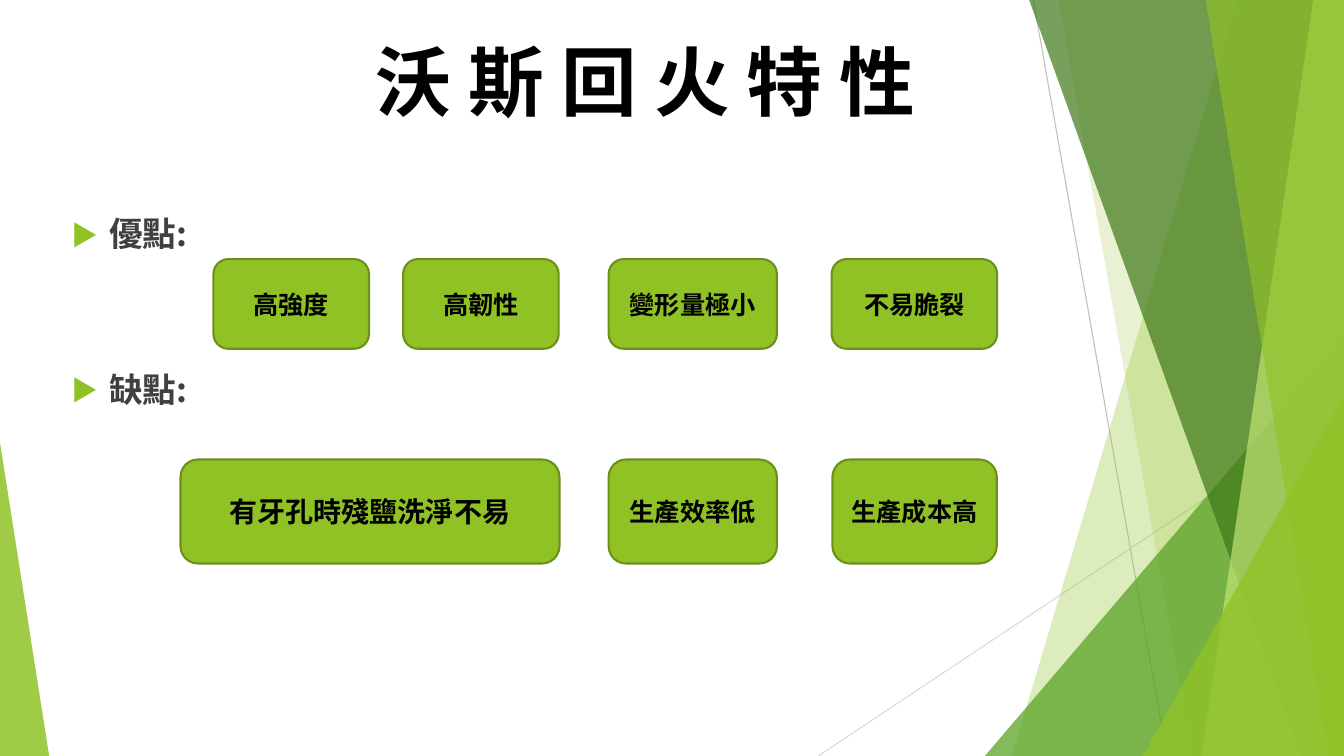
from lxml import etree
from pptx import Presentation
from pptx.dml.color import RGBColor
from pptx.enum.shapes import MSO_CONNECTOR, MSO_SHAPE
from pptx.enum.text import MSO_ANCHOR, MSO_AUTO_SIZE, PP_ALIGN
from pptx.oxml.ns import qn
from pptx.util import Cm, Pt

LINE = MSO_CONNECTOR.STRAIGHT
ROUND = MSO_SHAPE.ROUNDED_RECTANGLE
WEDGE = MSO_SHAPE.RIGHT_TRIANGLE
PEAK = MSO_SHAPE.ISOSCELES_TRIANGLE
TOP, MIDDLE = MSO_ANCHOR.TOP, MSO_ANCHOR.MIDDLE
CENTER, LEFT = PP_ALIGN.CENTER, PP_ALIGN.LEFT
FONT = "Noto Sans CJK SC"
WIDE, HIGH = 33.87, 19.05
HEX = {
    "lime": "90C226", "leaf": "54A021", "pine": "3F7819", "pale": "C0E474",
    "edge": "6B901C", "black": "000000", "text": "404040",
    "gray": "BFBFBF", "mist": "D9D9D9",
}


def write(para, text, size=18, color="black", align=CENTER):
    para.alignment = align
    run = para.add_run()
    run.text = text
    run.font.name = FONT
    run.font.size = Pt(size)
    run.font.bold = True
    run.font.color.rgb = RGBColor.from_string(HEX[color])
    etree.SubElement(run.font._element, qn("a:ea"), typeface=FONT)


def paint(shape, color, alpha=100):
    shape.shadow.inherit = False
    shape.fill.solid()
    shape.fill.fore_color.rgb = RGBColor.from_string(HEX[color])
    if alpha < 100:
        tint = shape._element.spPr.find(qn("a:solidFill"))[0]
        etree.SubElement(tint, qn("a:alpha"), val=str(alpha * 1000))


prs = Presentation()
prs.slide_width, prs.slide_height = Cm(WIDE), Cm(HIGH)
slide = prs.slides.add_slide(prs.slide_layouts[1])
shapes = slide.shapes
title, body = shapes.title, slide.placeholders[1]

rays = [
    (26.04, 0, 29.41, HIGH, "gray"),
    (WIDE, 10.24, 20.62, HIGH, "mist"),
]
for *ends, color in rays:
    ray = shapes.add_connector(LINE, *[Cm(end) for end in ends])
    ray.line.color.rgb = RGBColor.from_string(HEX[color])
    ray.line.width = Pt(0.75)
    etree.SubElement(ray._element.spPr, qn("a:effectLst"))

panes = [
    ((31.19, 25.5), "lime", 30),
    ((26.67, 30.05), "lime", 20),
    ((24.82, 8.46, 9.05, 10.59), "leaf", 72),
    ((25.93, 32.79), "pine", 70),
    ((33.1, 30.28), "pale", 70),
    ((30.38, 33.48), "lime", 65),
    ((28.8, 9.98, 5.07, 9.07), "lime", 80),
    ((0, 11.15, 1.24, 7.9), "lime", 85),
]
for place, color, alpha in panes:
    if len(place) == 2:
        high, low = place
        path = shapes.build_freeform(Cm(high), Cm(-0.02))
        corners = [(WIDE, -0.02), (WIDE, HIGH), (low, HIGH)]
        path.add_line_segments([(Cm(x), Cm(y)) for x, y in corners])
        pane = path.convert_to_shape()
    else:
        pane = shapes.add_shape(PEAK, *[Cm(part) for part in place])
        pane.adjustments[0] = 1 if place[0] else 0
    paint(pane, color, alpha)
    pane.line.fill.background()

holders = [
    (title, (2.11, 1.02, 28.32, 3.66)),
    (body, (1.55, 5.36, 29.11, 11.43)),
]
for holder, place in holders:
    holder.left, holder.top, holder.width, holder.height = [Cm(part) for part in place]
    frame = holder.text_frame
    frame.word_wrap = True
    frame.auto_size = MSO_AUTO_SIZE.NONE
    frame.vertical_anchor = TOP
    shapes._spTree.append(holder._element)

head = title.text_frame.paragraphs[0]
head.line_spacing = 0.9
write(head, "沃 斯 回 火 特 性", size=54)

frame = body.text_frame
for label, gap in [("優點:", 0), ("缺點:", 85)]:
    para = frame.add_paragraph() if gap else frame.paragraphs[0]
    para.line_spacing = 0.9
    para.space_before = Pt(gap)
    props = para._p.get_or_add_pPr()
    props.set("marL", str(Cm(0.95)))
    props.set("indent", str(Cm(-0.95)))
    tint = etree.SubElement(props, qn("a:buClr"))
    etree.SubElement(tint, qn("a:srgbClr"), val=HEX["lime"])
    etree.SubElement(props, qn("a:buSzPct"), val="80000")
    etree.SubElement(props, qn("a:buFont"), typeface=FONT)
    etree.SubElement(props, qn("a:buChar"), char="▶")
    write(para, label, size=24, color="text", align=LEFT)

rows = [
    (6.53, 2.26, [
        ("高強度", 5.38, 3.92, 18),
        ("高韌性", 10.16, 3.92, 18),
        ("變形量極小", 15.34, 4.24, 18),
        ("不易脆裂", 20.96, 4.17, 18),
    ]),
    (11.58, 2.62, [
        ("有牙孔時殘鹽洗淨不易", 4.55, 9.55, 20),
        ("生產效率低", 15.34, 4.24, 18),
        ("生產成本高", 20.98, 4.14, 18),
    ]),
]
for top, height, cards in rows:
    for label, left, width, size in cards:
        card = shapes.add_shape(ROUND, Cm(left), Cm(top), Cm(width), Cm(height))
        paint(card, "lime")
        card.line.color.rgb = RGBColor.from_string(HEX["edge"])
        card.line.width = Pt(1.5)
        card.text_frame.word_wrap = True
        card.text_frame.vertical_anchor = MIDDLE
        write(card.text_frame.paragraphs[0], label, size=size)

prs.save("out.pptx")
